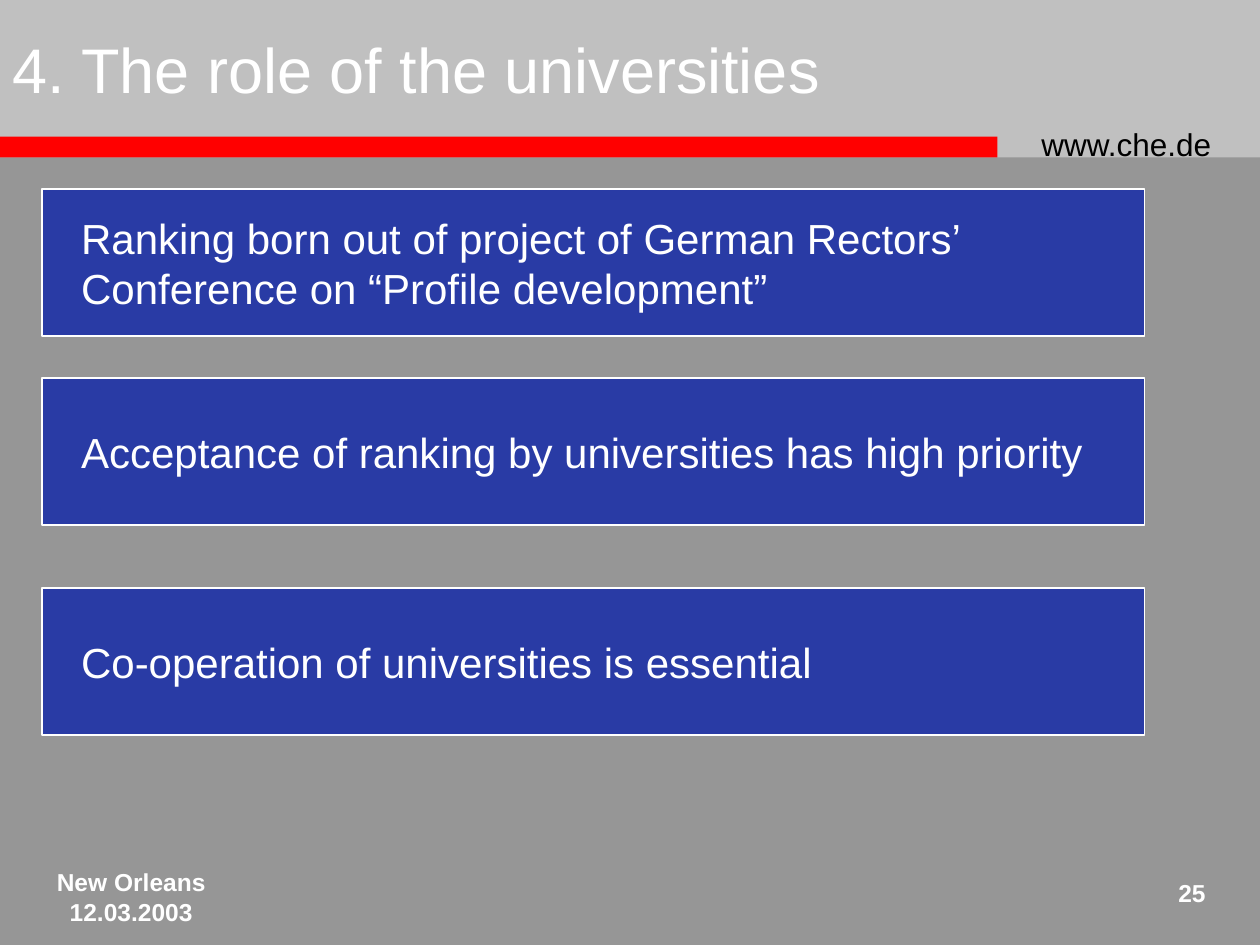
from pptx import Presentation, util as u
from pptx.dml.color import RGBColor
from pptx.enum import shapes, text

GREY = RGBColor(0x96, 0x96, 0x96)
SILVER = RGBColor(0xC0, 0xC0, 0xC0)
RED = RGBColor(0xFF, 0x00, 0x00)
BLUE = RGBColor(0x29, 0x3B, 0xA5)
WHITE = RGBColor(0xFF, 0xFF, 0xFF)
BLACK = RGBColor(0x00, 0x00, 0x00)

LEFT, CENTER, RIGHT = text.PP_ALIGN.LEFT, text.PP_ALIGN.CENTER, text.PP_ALIGN.RIGHT
TOP, MIDDLE = text.MSO_ANCHOR.TOP, text.MSO_ANCHOR.MIDDLE

# Places are (left, top, width, height) in grid cells, 12 cells to the inch.
CELL = u.Inches(1) / 12
COLS, ROWS = 120, 90

BANDS = [((0, 0, COLS, 15), SILVER), ((0, 13, 95, 2), RED)]

LABELS = [
    ((98, 11.3, 21, 4.8), ["www.che.de"],
     dict(size=u.Pt(18)), BLACK, LEFT, TOP),
    ((0, 82, 25, 6), ["New Orleans", "12.03.2003"],
     dict(size=u.Pt(14), bold=True), WHITE, CENTER, TOP),
    ((109, 83, 7, 5), ["25"],
     dict(size=u.Pt(14), bold=True), WHITE, RIGHT, TOP),
    ((0, 0, 97, 13), ["4. The role of the universities"],
     dict(size=u.Pt(36)), WHITE, LEFT, MIDDLE),
]

BOX_LEFT, BOX_WIDTH, BOX_HEIGHT = 4, 105, 14
STATEMENTS = [
    (18, ["Ranking born out of project of German Rectors’",
          "Conference on “Profile development”"]),
    (36, ["Acceptance of ranking by universities has high priority"]),
    (56, ["Co-operation of universities is essential"]),
]


def cells(place):
    return [round(n * CELL) for n in place]


def add_rect(s, place, fill):
    sp = s.shapes.add_shape(shapes.MSO_SHAPE.RECTANGLE, *cells(place))
    sp.shadow.inherit = False
    sp.fill.solid()
    sp.fill.fore_color.rgb = fill
    sp.line.fill.background()
    return sp


def write(sp, lines, font, color, align, anchor):
    tf = sp.text_frame
    tf.word_wrap = True
    tf.vertical_anchor = anchor
    tf.text = "\n".join(lines)
    for p in tf.paragraphs:
        p.alignment = align
        for r in p.runs:
            for name, value in dict(name="Arial", **font).items():
                setattr(r.font, name, value)
            r.font.color.rgb = color


def main():
    prs = Presentation()
    prs.slide_width, prs.slide_height = cells((COLS, ROWS))
    s = prs.slides.add_slide(prs.slide_layouts[6])
    s.background.fill.solid()
    s.background.fill.fore_color.rgb = GREY

    for place, fill in BANDS:
        add_rect(s, place, fill)
    for place, *content in LABELS:
        write(s.shapes.add_textbox(*cells(place)), *content)
    for top, lines in STATEMENTS:
        sp = add_rect(s, (BOX_LEFT, top, BOX_WIDTH, BOX_HEIGHT), BLUE)
        sp.line.color.rgb = WHITE
        sp.line.width = u.Pt(0.75)
        sp.text_frame.margin_left = u.Inches(0.31)
        write(sp, lines, dict(size=u.Pt(24)), WHITE, LEFT, MIDDLE)

    prs.save("out.pptx")


if __name__ == "__main__":
    main()
